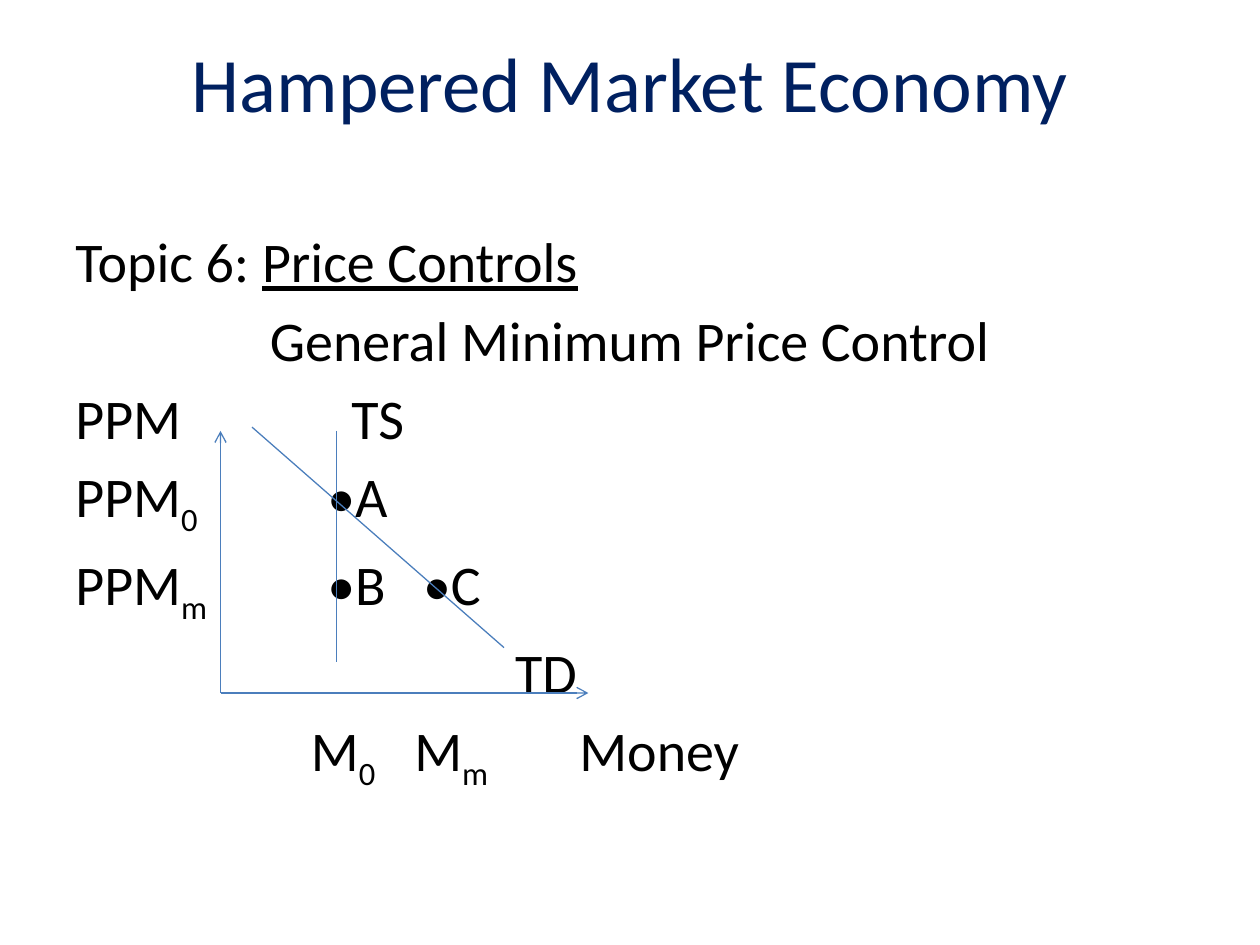
import pptx
import pptx.util
import pptx.dml.color
import pptx.enum.shapes
import pptx.enum.text
import pptx.oxml.ns
import lxml.etree

Inches, Pt = pptx.util.Inches, pptx.util.Pt
ALIGN = pptx.enum.text.PP_ALIGN
ANCHOR = pptx.enum.text.MSO_ANCHOR
FONT = "Calibri"
COLORS = {"title": "002060", "text": "000000", "line": "4B7EBC"}

# Content: each line is (alignment, tab stops in inches, [(text, style), ...])
TITLE = [(ALIGN.CENTER, [], [("Hampered Market Economy", "")])]
BODY = [
    (ALIGN.LEFT, [], [("Topic 6: ", ""), ("Price Controls", "underline")]),
    (ALIGN.CENTER, [], [("General Minimum Price Control", "")]),
    (ALIGN.LEFT, [2.19], [("PPM\tTS", "")]),
    (ALIGN.LEFT, [2], [("PPM", ""), ("0", "sub"), ("\t•A", "")]),
    (ALIGN.LEFT, [2, 2.76], [("PPM", ""), ("m", "sub"), ("\t•B\t•C", "")]),
    (ALIGN.LEFT, [3.49], [("\tTD", "")]),
    (ALIGN.LEFT, [1.87, 2.69, 4],
     [("\tM", ""), ("0", "sub"), ("\tM", ""), ("m", "sub"), ("\tMoney", "")]),
]

# Diagram: (start, end, has arrowhead)
ORIGIN = (1.75, 5.5)
LINES = [
    (ORIGIN, (1.75, 3.42), True),            # price axis
    (ORIGIN, (4.67, 5.5), True),             # money axis
    ((2.67, 3.42), (2.67, 5.25), False),     # supply
    ((2, 3.39), (4, 5.14), False),           # demand
]


def rgb(name):
    return pptx.dml.color.RGBColor.from_string(COLORS[name])


def add_xml(parent, tag, **attributes):
    return lxml.etree.SubElement(parent, pptx.oxml.ns.qn(tag), **attributes)


def add_text(page, place, lines, size, color, anchor, space_before=0):
    box = page.shapes.add_textbox(*map(Inches, place))
    frame = box.text_frame
    frame.word_wrap = True
    frame.vertical_anchor = anchor
    for number, (align, stops, spans) in enumerate(lines):
        para = frame.add_paragraph() if number else frame.paragraphs[0]
        para.alignment = align
        para.space_before = Pt(space_before)
        if stops:
            tabs = add_xml(para._p.get_or_add_pPr(), "a:tabLst")
            for stop in stops:
                add_xml(tabs, "a:tab", pos=str(Inches(stop)), algn="l")
        para.font.name = FONT
        para.font.size = Pt(size)
        para.font.color.rgb = rgb(color)
        for text, style in spans:
            span = para.add_run()
            span.text = text
            if style == "underline":
                span.font.underline = True
            elif style == "sub":
                span._r.get_or_add_rPr().set("baseline", "-25000")


def add_line(page, start, end, arrow):
    line = page.shapes.add_connector(
        pptx.enum.shapes.MSO_CONNECTOR.STRAIGHT, *map(Inches, start + end))
    line.line.color.rgb = rgb("line")
    line.line.width = Pt(0.75)
    if arrow:
        add_xml(line.line._get_or_add_ln(), "a:tailEnd", type="arrow")
    add_xml(line._element.spPr, "a:effectLst")


def main():
    deck = pptx.Presentation()
    deck.slide_width, deck.slide_height = Inches(10), Inches(7.5)
    page = deck.slides.add_slide(deck.slide_layouts[6])

    # Title and text
    add_text(page, (0, 0.02, 10, 1.25), TITLE, 44, "title", ANCHOR.MIDDLE)
    add_text(page, (0.5, 1.75, 9, 4.95), BODY, 32, "text", ANCHOR.TOP, 6.4)

    # Supply and demand diagram
    for start, end, arrow in LINES:
        add_line(page, start, end, arrow)

    deck.save("out.pptx")


if __name__ == "__main__":
    main()
